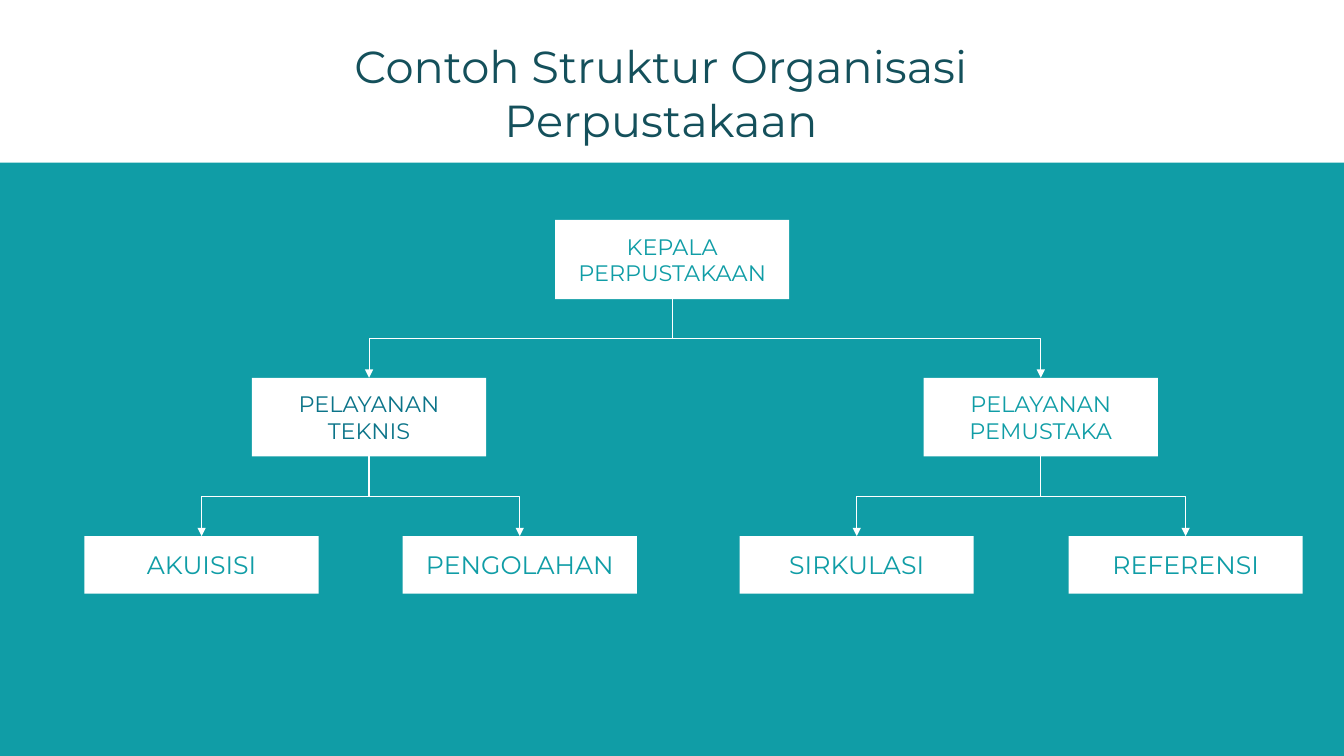
from lxml import etree
from pptx import Presentation
from pptx.dml.color import RGBColor
from pptx.enum.shapes import MSO_CONNECTOR, MSO_SHAPE
from pptx.enum.text import MSO_ANCHOR, MSO_AUTO_SIZE, PP_ALIGN
from pptx.oxml.ns import qn
from pptx.util import Cm, Pt

RECT, ELBOW = MSO_SHAPE.RECTANGLE, MSO_CONNECTOR.ELBOW
TOP, MIDDLE = MSO_ANCHOR.TOP, MSO_ANCHOR.MIDDLE
CENTER, NO_FIT = PP_ALIGN.CENTER, MSO_AUTO_SIZE.NONE

FONT = "Montserrat"
WHITE, TEAL, DARK, DEEP = "FFFFFF", "109DA6", "14505B", "0B7489"
WIDE, HIGH, BAND_TOP, BOX_WIDE = 33.87, 19.05, 4.1, 5.9

TITLE = "Contoh Struktur Organisasi Perpustakaan"
# level: (top, height, text size)
LEVELS = [(5.54, 2, 16), (9.52, 1.98, 16), (13.51, 1.45, 18)]
# (text, level, left, text colour, parent)
UNITS = [
    ("KEPALA PERPUSTAKAAN", 0, 13.99, TEAL, None),
    ("PELAYANAN TEKNIS", 1, 6.35, DEEP, "KEPALA PERPUSTAKAAN"),
    ("PELAYANAN PEMUSTAKA", 1, 23.28, TEAL, "KEPALA PERPUSTAKAAN"),
    ("AKUISISI", 2, 2.13, TEAL, "PELAYANAN TEKNIS"),
    ("PENGOLAHAN", 2, 10.15, TEAL, "PELAYANAN TEKNIS"),
    ("SIRKULASI", 2, 18.64, TEAL, "PELAYANAN PEMUSTAKA"),
    ("REFERENSI", 2, 26.93, TEAL, "PELAYANAN PEMUSTAKA"),
]


def color(code):
    return RGBColor.from_string(code)


def write(shape, text, size, code, anchor):
    frame = shape.text_frame
    frame.text = text
    frame.word_wrap = True
    frame.auto_size = NO_FIT
    frame.vertical_anchor = anchor
    line = frame.paragraphs[0]
    line.alignment = CENTER
    font = line.runs[0].font
    font.name, font.size = FONT, Pt(size)
    font.color.rgb = color(code)


def block(slide, left, top, width, height, code):
    shape = slide.shapes.add_shape(RECT, Cm(left), Cm(top), Cm(width), Cm(height))
    shape.shadow.inherit = False
    shape.fill.solid()
    shape.fill.fore_color.rgb = color(code)
    shape.line.fill.background()
    return shape


def link(slide, boss, unit):
    """Draw an elbow arrow that leaves boss downwards and enters unit from above."""
    x1, y1 = boss.left + boss.width // 2, boss.top + boss.height
    x2, y2 = unit.left + unit.width // 2, unit.top
    arrow = slide.shapes.add_connector(ELBOW, x1, y1, x2, y2)
    arrow.begin_connect(boss, 2)
    arrow.end_connect(unit, 0)
    # An elbow starts sideways, so its frame is turned a quarter to start downwards.
    drop, span = y2 - y1, abs(x2 - x1)
    arrow.left, arrow.top = (x1 + x2 - drop) // 2, (y1 + y2 - span) // 2
    arrow.width, arrow.height = drop, span
    props = arrow.line._get_or_add_ln().getparent()
    frame = props.find(qn("a:xfrm"))
    right = x2 > x1
    frame.set("rot", str((270 if right else 90) * 60000))
    frame.set("flipH", "1" if right else "0")
    arrow.line.color.rgb = color(WHITE)
    arrow.line.width = Pt(0.75)
    etree.SubElement(props.find(qn("a:ln")), qn("a:tailEnd"), type="triangle")
    etree.SubElement(props, qn("a:effectLst"))


def main():
    deck = Presentation()
    deck.slide_width, deck.slide_height = Cm(WIDE), Cm(HIGH)
    slide = deck.slides.add_slide(deck.slide_layouts[5])

    title = slide.shapes.title
    title.left, title.top = Cm(5.94), Cm(0.86)
    title.width, title.height = Cm(21.44), Cm(3)
    write(title, TITLE, 32, DARK, TOP)

    block(slide, 0, BAND_TOP, WIDE, HIGH - BAND_TOP, TEAL)
    boxes = {}
    for text, level, left, code, _ in UNITS:
        top, height, size = LEVELS[level]
        boxes[text] = block(slide, left, top, BOX_WIDE, height, WHITE)
        write(boxes[text], text, size, code, MIDDLE)
    for text, _, _, _, boss in UNITS:
        if boss:
            link(slide, boxes[boss], boxes[text])

    deck.save("out.pptx")


if __name__ == "__main__":
    main()
